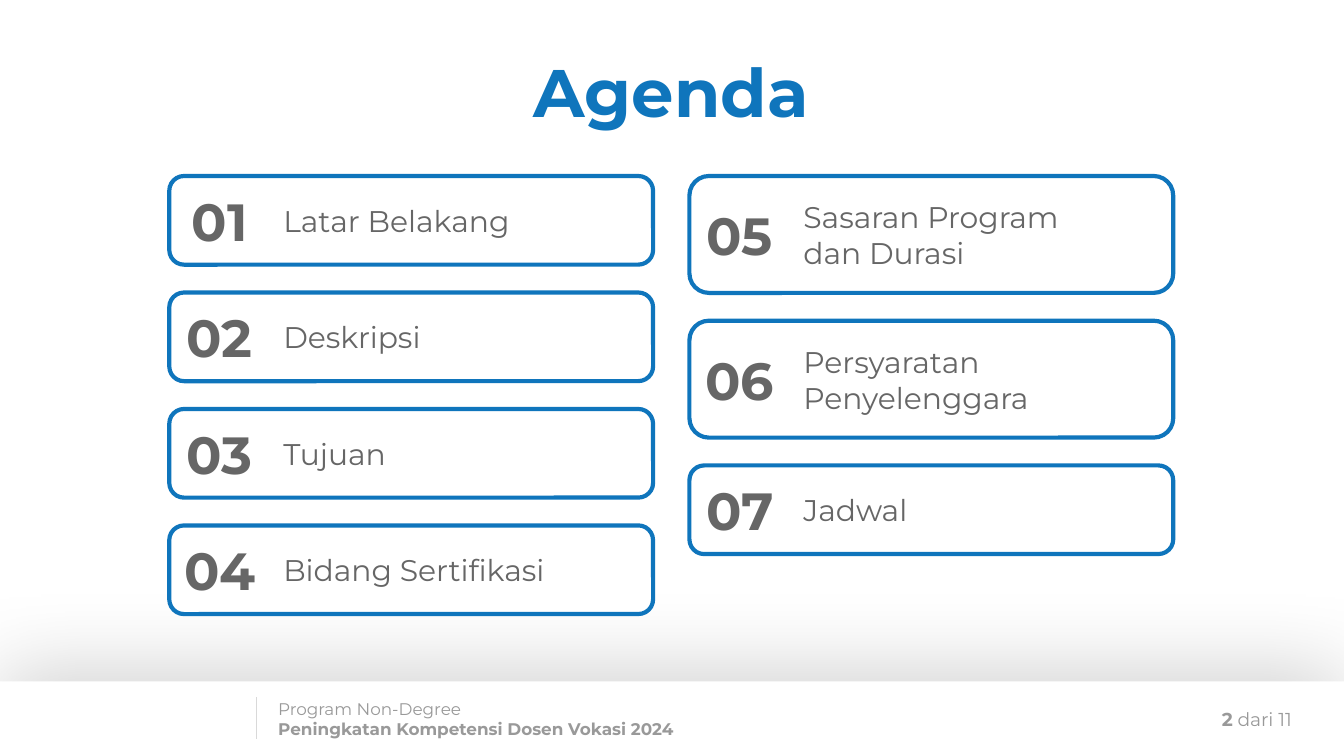
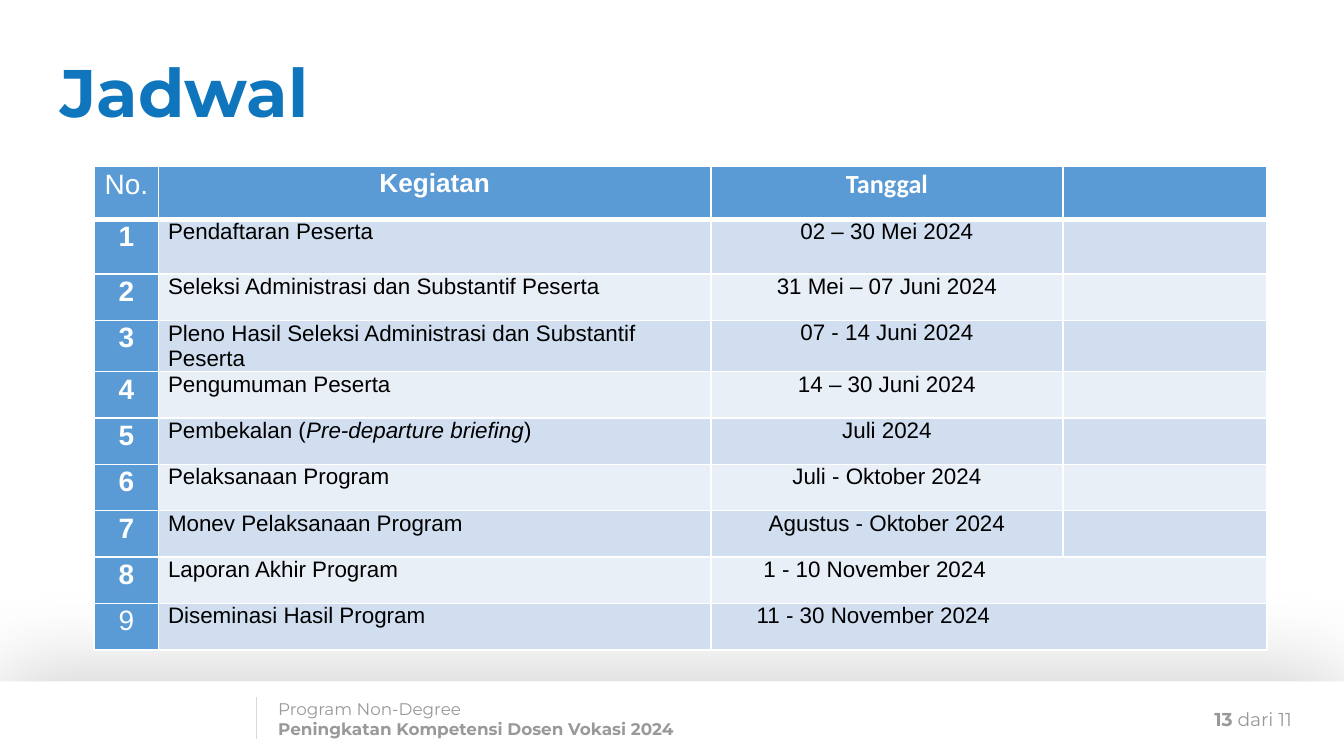
import pptx
import pptx.dml.color
import pptx.enum.shapes
import pptx.enum.text
import pptx.oxml
import pptx.oxml.ns
import pptx.util

Inches = pptx.util.Inches
Pt = pptx.util.Pt
ALIGN = pptx.enum.text.PP_ALIGN
SHAPE = pptx.enum.shapes.MSO_SHAPE
NAMESPACE = pptx.oxml.ns.nsdecls("a")

COLORS = {
    "white": "FFFFFF", "black": "000000", "blue": "0F75BC", "text": "666666",
    "footer": "999999", "rule": "D9D9D9", "table_head": "5B9BD5",
    "band_dark": "D0DEEF", "band_light": "E9EFF7",
}
BRAND_FONT = "Montserrat"
TABLE_FONT = "Arial"
SLIDE_WIDTH = 10

FOOTER_LINES = ("Program Non-Degree", "Peningkatan Kompetensi Dosen Vokasi 2024")
PAGE_TOTAL = " dari 11"

AGENDA_COLUMNS = [
    (1.26, ["Latar Belakang", "Deskripsi", "Tujuan", "Bidang Sertifikasi"]),
    (5.13, ["Sasaran Program dan Durasi", "Persyaratan Penyelenggara", "Jadwal"]),
]
TWO_LINE_ITEMS = {"Sasaran Program dan Durasi", "Persyaratan Penyelenggara"}
CARD_WIDTH, NUMBER_WIDTH, LABEL_WIDTH = 3.6, 0.75, 2.5
CARD_HEIGHT, TALL_CARD_HEIGHT = 0.66, 0.87
AGENDA_TOP, LAST_CARD_TOP = 1.31, 3.91
# Four short cards share the height of the first column evenly.
AGENDA_GAP = (LAST_CARD_TOP - AGENDA_TOP) / 3 - CARD_HEIGHT

SCHEDULE_HEADER = ["No.", "Kegiatan", "Tanggal"]
# Text between asterisks is italic.
SCHEDULE = [
    ("Pendaftaran Peserta", "02 – 30 Mei 2024"),
    ("Seleksi Administrasi dan Substantif Peserta", "31 Mei – 07 Juni 2024"),
    ("Pleno Hasil Seleksi Administrasi dan Substantif Peserta", "07 - 14 Juni 2024"),
    ("Pengumuman Peserta", "14 – 30 Juni 2024"),
    ("Pembekalan (*Pre-departure briefing*)", "Juli 2024"),
    ("Pelaksanaan Program", "Juli - Oktober 2024"),
    ("Monev Pelaksanaan Program", "Agustus - Oktober 2024"),
    ("Laporan Akhir Program", "1 - 10 November 2024"),
    ("Diseminasi Hasil Program", "11 - 30 November 2024"),
]
MERGED_DATE_INDENTS = {8: 0.39, 9: 0.34}
DATE_INDENT = 0.32
COLUMN_WIDTHS = [0.48, 4.11, 2.62, 1.52]
ROW_HEIGHTS = [0.39, 0.41] + [2.76 / 8] * 8


def rgb(name):
    return pptx.dml.color.RGBColor.from_string(COLORS[name])


def style_run(run, size, color, bold=False, font=BRAND_FONT):
    run.font.name = font
    run.font.size = Pt(size)
    run.font.bold = bold
    run.font.color.rgb = rgb(color)


def set_frame(frame, inset_x, inset_y):
    frame.word_wrap = True
    frame.auto_size = pptx.enum.text.MSO_AUTO_SIZE.NONE
    frame.vertical_anchor = pptx.enum.text.MSO_ANCHOR.MIDDLE
    frame.margin_left = frame.margin_right = Inches(inset_x)
    frame.margin_top = frame.margin_bottom = Inches(inset_y)


def add_label(slide, box, paragraphs, size, color, inset=(0.1, 0.1), align=ALIGN.LEFT):
    """Add a text box; each paragraph is a list of (text, bold) runs."""
    frame = slide.shapes.add_textbox(*map(Inches, box)).text_frame
    set_frame(frame, *inset)
    for index, runs in enumerate(paragraphs):
        paragraph = frame.add_paragraph() if index else frame.paragraphs[0]
        paragraph.alignment = align
        for text, bold in runs:
            run = paragraph.add_run()
            run.text = text
            style_run(run, size, color, bold)


def add_footer(slide, page):
    band = slide.shapes.add_shape(SHAPE.RECTANGLE, 0, Inches(5.07),
                                  Inches(SLIDE_WIDTH), Inches(0.56))
    band.fill.solid()
    band.fill.fore_color.rgb = rgb("white")
    band.line.fill.background()
    band._element.spPr.append(pptx.oxml.parse_xml(
        f'<a:effectLst {NAMESPACE}><a:outerShdw blurRad="{Pt(46.1)}" dist="{Pt(5.2)}" '
        f'dir="{271 * 60000}" algn="bl" rotWithShape="0"><a:srgbClr val="{COLORS["black"]}">'
        '<a:alpha val="18000"/></a:srgbClr></a:outerShdw></a:effectLst>'))

    program, theme = FOOTER_LINES
    add_label(slide, (2, 5.1, 5.31, 0.5), [[(program, False)], [(theme, True)]],
              9, "footer", (0.07, 0.04))
    add_label(slide, (8.16, 5.2, 1.55, 0.3), [[(str(page), True), (PAGE_TOTAL, False)]],
              10, "footer", (0.1, 0.05), ALIGN.RIGHT)

    rule = slide.shapes.add_connector(pptx.enum.shapes.MSO_CONNECTOR.STRAIGHT,
                                      Inches(1.91), Inches(5.19), Inches(1.91), Inches(5.5))
    rule.line.color.rgb = rgb("rule")
    rule.line.width = Pt(0.75)
    rule._element.spPr.append(pptx.oxml.parse_xml(f"<a:effectLst {NAMESPACE}/>"))


def add_slide(presentation, title, page, left, width, align):
    """Add a slide with the shared footer and title style."""
    slide = presentation.slides.add_slide(presentation.slide_layouts[5])
    add_footer(slide, page)
    shape = slide.shapes.title
    shape.left, shape.top, shape.width, shape.height = map(Inches, (left, 0.34, width, 0.75))
    shape.text_frame.text = title
    set_frame(shape.text_frame, 0.07, 0.04)
    paragraph = shape.text_frame.paragraphs[0]
    paragraph.alignment = align
    paragraph.line_spacing = 0.9
    style_run(paragraph.runs[0], 36, "blue", True)
    return slide


def add_agenda_card(slide, left, top, height, number, label):
    card = slide.shapes.add_shape(SHAPE.ROUNDED_RECTANGLE,
                                  *map(Inches, (left, top, CARD_WIDTH, height)))
    card.shadow.inherit = False
    card.fill.solid()
    card.fill.fore_color.rgb = rgb("white")
    card.line.color.rgb = rgb("blue")
    card.line.width = Pt(2.25)
    add_label(slide, (left, top, NUMBER_WIDTH, height), [[(f"{number:02d}", True)]],
              28, "text", align=ALIGN.CENTER)
    add_label(slide, (left + NUMBER_WIDTH, top, LABEL_WIDTH, height), [[(label, False)]],
              16, "text")


def build_agenda(presentation):
    slide = add_slide(presentation, "Agenda", 2, 0.52, 8.95, ALIGN.CENTER)
    number = 0
    for left, labels in AGENDA_COLUMNS:
        top = AGENDA_TOP
        for label in labels:
            number += 1
            height = TALL_CARD_HEIGHT if label in TWO_LINE_ITEMS else CARD_HEIGHT
            add_agenda_card(slide, left, top, height, number, label)
            top += height + AGENDA_GAP


def format_cell(cell, fill, row):
    """Set white borders (thick under the header), fill and margins."""
    properties = cell._tc.get_or_add_tcPr()
    thick_side = {0: "lnB", 1: "lnT"}.get(row)
    for side in ("lnL", "lnR", "lnT", "lnB"):
        width = Pt(3 if side == thick_side else 1)
        properties.append(pptx.oxml.parse_xml(
            f'<a:{side} {NAMESPACE} w="{width}"><a:solidFill>'
            f'<a:srgbClr val="{COLORS["white"]}"/></a:solidFill></a:{side}>'))
    cell.fill.solid()
    cell.fill.fore_color.rgb = rgb(fill)
    cell.margin_top = cell.margin_bottom = 0
    side_margin = Inches(0.07) if fill == "table_head" else 0
    cell.margin_left = cell.margin_right = side_margin


def write_cell(cell, text, size, color, bold=False, align=ALIGN.CENTER,
               indent=0, spacing=None, font=TABLE_FONT):
    paragraph = cell.text_frame.paragraphs[0]
    paragraph.alignment = align
    if spacing:
        paragraph.line_spacing = spacing
    if indent:
        properties = paragraph._p.get_or_add_pPr()
        properties.set("marL", str(Inches(indent)))
        properties.set("indent", "0")
        if align == ALIGN.CENTER:
            properties.set("marR", str(Inches(indent)))
    for index, part in enumerate(text.split("*")):
        run = paragraph.add_run()
        run.text = part
        style_run(run, size, color, bold, font)
        run.font.italic = index % 2 == 1


def build_schedule(presentation):
    slide = add_slide(presentation, "Jadwal", 13, 0.38, 9.06, ALIGN.LEFT)
    frame = slide.shapes.add_table(
        len(ROW_HEIGHTS), len(COLUMN_WIDTHS), Inches(0.7), Inches(1.24),
        Inches(sum(COLUMN_WIDTHS)), Inches(sum(ROW_HEIGHTS)))
    table = frame.table
    for column, width in zip(table.columns, COLUMN_WIDTHS):
        column.width = Inches(width)
    for row, height in zip(table.rows, ROW_HEIGHTS):
        row.height = Inches(height)

    for row in range(len(ROW_HEIGHTS)):
        band = "band_dark" if row % 2 else "band_light"
        for column in range(len(COLUMN_WIDTHS)):
            fill = "table_head" if row == 0 or column == 0 else band
            format_cell(table.cell(row, column), fill, row)

    for column, heading in enumerate(SCHEDULE_HEADER):
        write_cell(table.cell(0, column), heading, 14 if column else 15, "white",
                   bold=column > 0, spacing=1.07,
                   font="Calibri" if heading == "Tanggal" else TABLE_FONT)

    for row, (activity, dates) in enumerate(SCHEDULE, start=1):
        write_cell(table.cell(row, 0), str(row), 15, "white",
                   bold=row < len(SCHEDULE), spacing=1.07)
        write_cell(table.cell(row, 1), activity, 12, "black", align=ALIGN.LEFT,
                   indent=0.07, spacing=1.02 if row == 3 else None)
        merged = row in MERGED_DATE_INDENTS
        if merged:
            table.cell(row, 2).merge(table.cell(row, 3))
        write_cell(table.cell(row, 2), dates, 12, "black",
                   align=ALIGN.LEFT if merged else ALIGN.CENTER,
                   indent=MERGED_DATE_INDENTS.get(row, DATE_INDENT))


def main():
    presentation = pptx.Presentation()
    presentation.slide_width = Inches(SLIDE_WIDTH)
    presentation.slide_height = Inches(SLIDE_WIDTH * 9 / 16)
    build_agenda(presentation)
    build_schedule(presentation)
    presentation.save("out.pptx")


if __name__ == "__main__":
    main()
